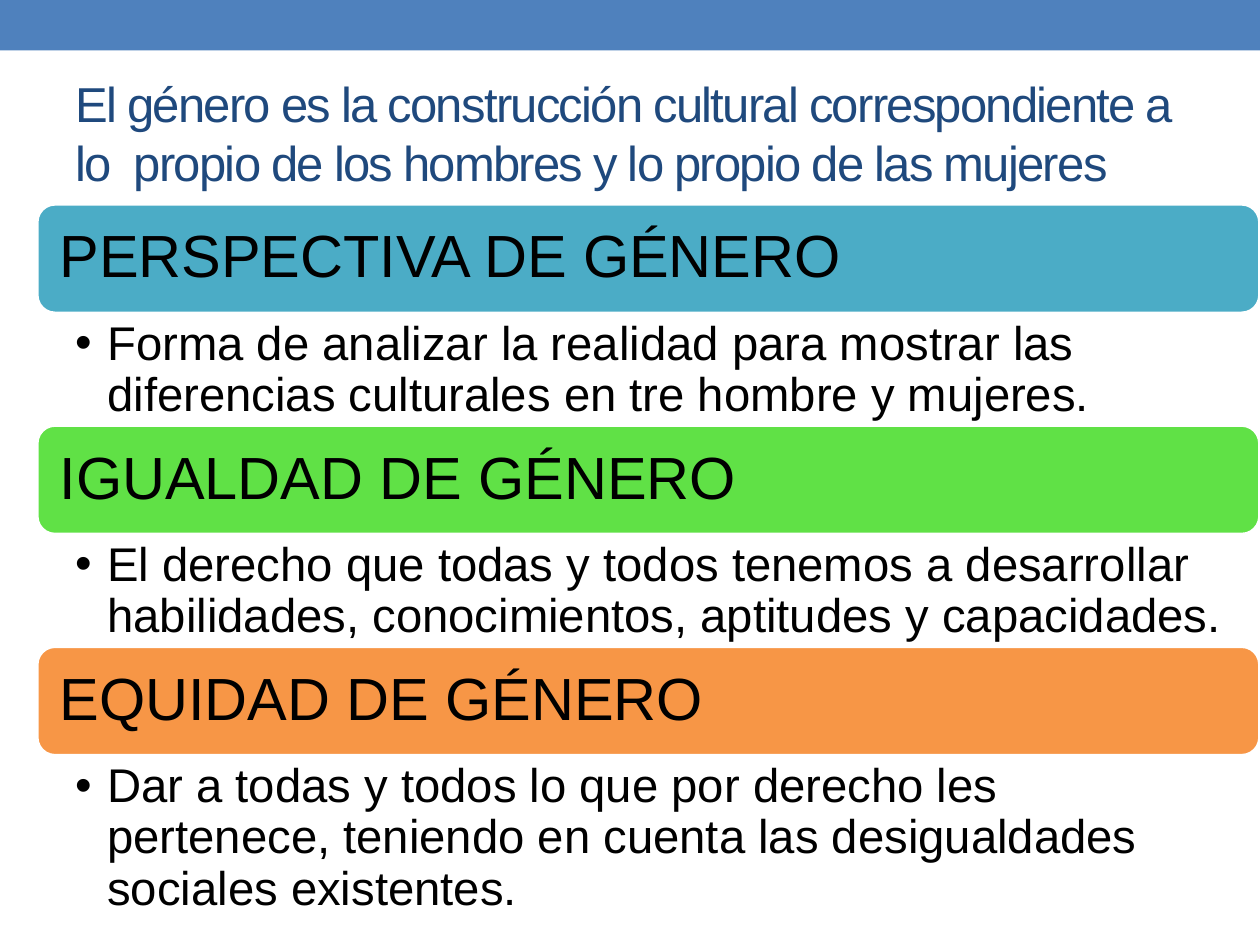
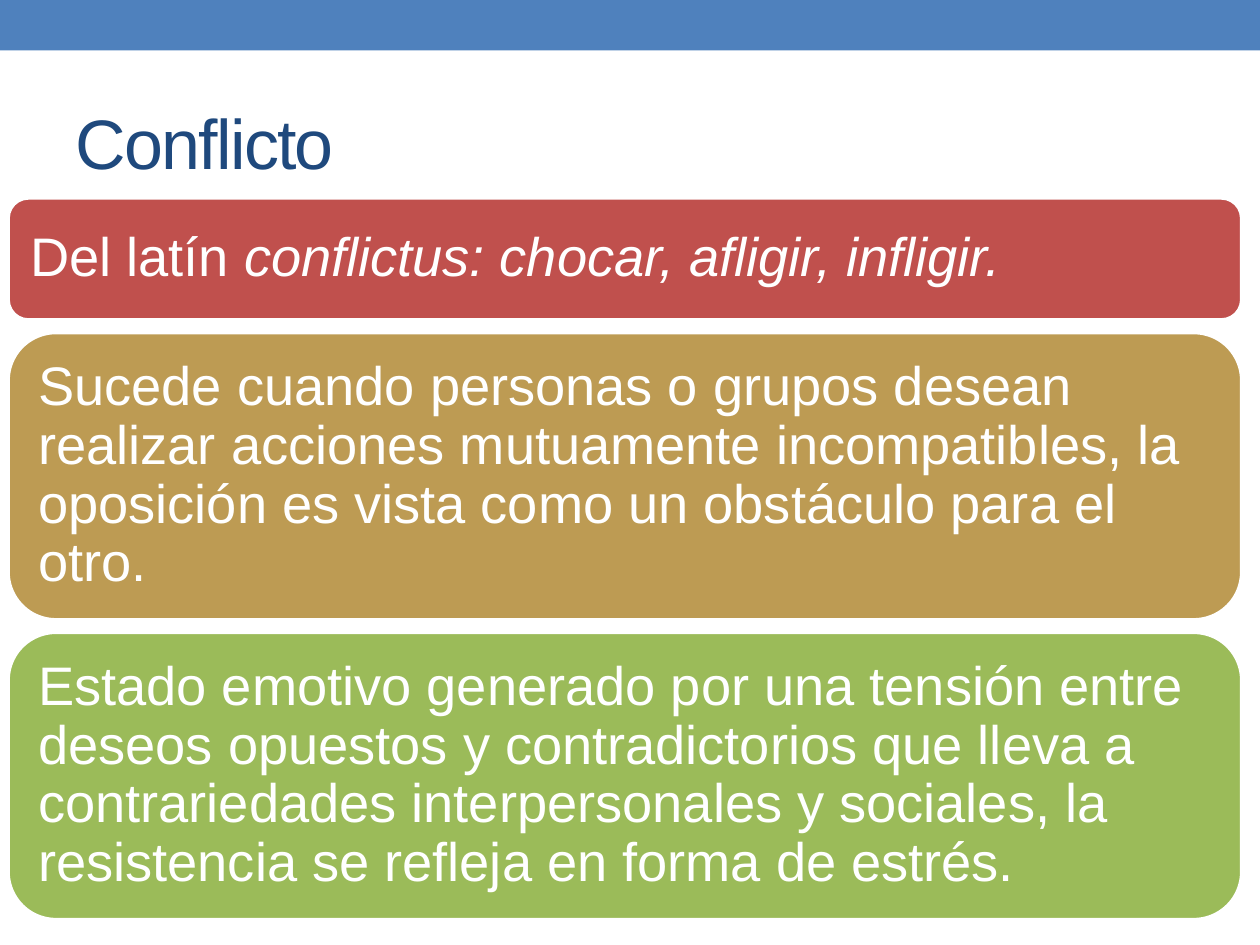
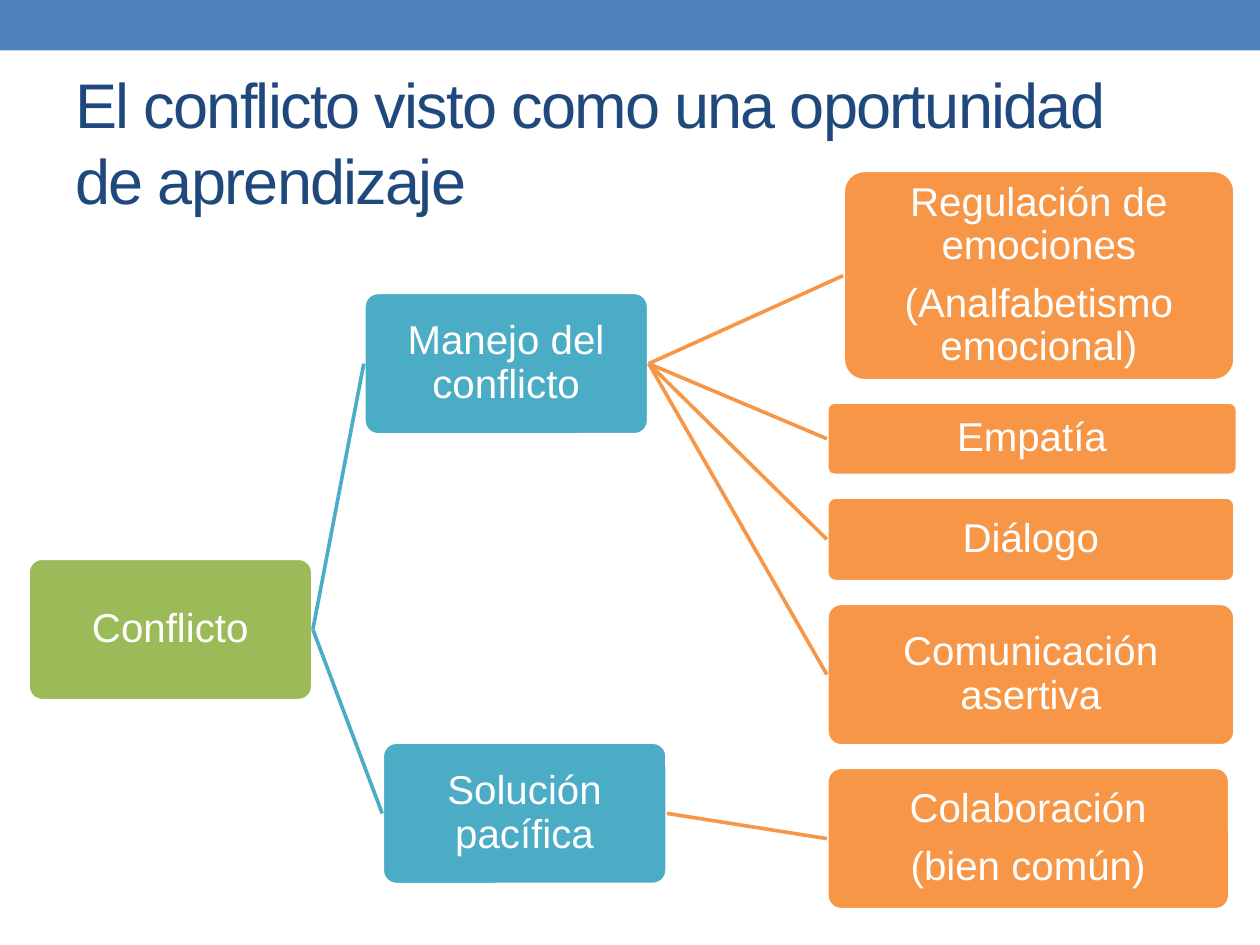
from dataclasses import dataclass

from lxml import etree
from pptx import Presentation
from pptx.dml.color import RGBColor
from pptx.enum.shapes import MSO_CONNECTOR, MSO_SHAPE
from pptx.enum.text import MSO_ANCHOR, MSO_AUTO_SIZE, PP_ALIGN
from pptx.oxml.ns import qn
from pptx.util import Pt

RECT = MSO_SHAPE.RECTANGLE
ROUND = MSO_SHAPE.ROUNDED_RECTANGLE
LINE = MSO_CONNECTOR.STRAIGHT
LEFT, CENTER = PP_ALIGN.LEFT, PP_ALIGN.CENTER
TOP, MIDDLE = MSO_ANCHOR.TOP, MSO_ANCHOR.MIDDLE
NO_FIT = MSO_AUTO_SIZE.NONE
TITLE_ONLY = 5


@dataclass(frozen=True)
class Theme:
    font: str = "Arial"
    blue: str = "4F81BD"
    navy: str = "1F497D"
    teal: str = "4BACC6"
    lime: str = "60E146"
    orange: str = "F79646"
    red: str = "C0504D"
    tan: str = "BD9B53"
    green: str = "9BBB59"
    white: str = "FFFFFF"
    black: str = "000000"
    head: int = 34
    item: int = 27
    panel: int = 31
    node: int = 23
    stroke: float = 2.08


T = Theme()
WIDTH, HEIGHT = 720, 540
BAND = (0, 0, WIDTH, 28.8)

TITLES = [
    ("El género es la construcción cultural correspondiente a "
     "lo  propio de los hombres y lo propio de las mujeres", 28, (36, 36.4, 648, 78.5)),
    ("Conflicto", 40, (36, 42, 648, 77.8)),
    ("El conflicto visto como una oportunidad de aprendizaje", 36, (36, 42, 648, 77.8)),
]

TERMS = [
    ("PERSPECTIVA DE GÉNERO", T.teal,
     "Forma de analizar la realidad para mostrar las diferencias "
     "culturales en tre hombre y mujeres."),
    ("IGUALDAD DE GÉNERO", T.lime,
     "El derecho que todas y todos tenemos a desarrollar habilidades, "
     "conocimientos, aptitudes y capacidades."),
    ("EQUIDAD DE GÉNERO", T.orange,
     "Dar a todas y todos lo que por derecho les pertenece, teniendo en cuenta "
     "las desigualdades sociales existentes."),
]

PANELS = [
    ("Del latín *conflictus: chocar, afligir, infligir.*", T.red, 69.8),
    ("Sucede cuando personas o grupos desean realizar acciones mutuamente "
     "incompatibles, la oposición es vista como un obstáculo para el otro.",
     T.tan, 164.2),
    ("Estado emotivo generado por una tensión entre deseos opuestos y "
     "contradictorios que lleva a contrariedades interpersonales y sociales, "
     "la resistencia se refleja en forma de estrés.", T.green, 164.2),
]

NODES = {
    "root": (["Conflicto"], T.green, None, (16, 319, 162.8, 81.4)),
    "manage": (["Manejo del conflicto"], T.teal, "root", (207.9, 167.1, 162.8, 81.4)),
    "calm": (["Regulación de emociones", "(Analfabetismo emocional)"],
             T.orange, "manage", (481.8, 97.4, 223.9, 120.2)),
    "care": (["Empatía"], T.orange, "manage", (472.5, 229.8, 234.6, 41.8)),
    "talk": (["Diálogo"], T.orange, "manage", (472.5, 284, 233.2, 48.4)),
    "speak": (["Comunicación asertiva"], T.orange, "manage", (472.5, 344.8, 233.2, 81.4)),
    "solve": (["Solución pacífica"], T.teal, "root", (218.4, 424.1, 162.8, 81.4)),
    "share": (["Colaboración", "(bien común)"],
              T.orange, "solve", (472.5, 438.5, 230.3, 81.4)),
}


def rgb(code):
    return RGBColor.from_string(code)


def put(target, **values):
    for name, value in values.items():
        setattr(target, name, value)


def write(shape, texts, size, color, pad, align=LEFT, anchor=MIDDLE, lead=0.9):
    frame = shape.text_frame
    sides = ("margin_left", "margin_top", "margin_right", "margin_bottom")
    put(frame, word_wrap=True, auto_size=NO_FIT, vertical_anchor=anchor,
        **{side: Pt(value) for side, value in zip(sides, pad)})
    for i, text in enumerate(texts):
        para = frame.add_paragraph() if i else frame.paragraphs[0]
        put(para, alignment=align, line_spacing=lead, space_before=Pt(8 if i else 0))
        for j, part in enumerate(text.split("*")):
            if part:
                run = para.add_run()
                run.text = part
                put(run.font, name=T.font, size=Pt(size), italic=j % 2 == 1)
                run.font.color.rgb = rgb(color)
    return frame


def add_box(slide, kind, place, fill, edge=None):
    box = slide.shapes.add_shape(kind, *map(Pt, place))
    box.shadow.inherit = False
    box.fill.solid()
    box.fill.fore_color.rgb = rgb(fill)
    if edge:
        box.line.color.rgb = rgb(edge)
        box.line.width = Pt(T.stroke)
    else:
        box.line.fill.background()
    return box


def add_title(deck, text, size, place):
    slide = deck.slides.add_slide(deck.slide_layouts[TITLE_ONLY])
    title = slide.shapes.title
    put(title, **dict(zip(("left", "top", "width", "height"), map(Pt, place))))
    frame = write(title, [text], size, T.navy, (7.2, 3.6, 7.2, 3.6), lead=1.0)
    frame.paragraphs[0].runs[0].font._element.set("spc", "-100")
    return slide


def add_bullet(para, indent):
    props = para._p.get_or_add_pPr()
    props.set("marL", str(Pt(indent)))
    props.set("indent", str(-Pt(indent)))
    etree.SubElement(props, qn("a:buFont")).set("typeface", T.font)
    etree.SubElement(props, qn("a:buChar")).set("char", "•")


def draw_terms(slide):
    left, top, wide, bar, gap = 21, 116.5, 699, 62.6, 63.8
    for i, (term, fill, text) in enumerate(TERMS):
        y = top + i * (bar + gap)
        box = add_box(slide, ROUND, (left, y, wide, bar), fill, T.white)
        write(box, [term], T.head, T.black, (10,) * 4)
        tall = 91.4 if i == len(TERMS) - 1 else gap
        note = slide.shapes.add_textbox(*map(Pt, (left, y + bar, wide, tall)))
        frame = write(note, [text], T.item, T.black, (22.3, 3.6, 18.7, 3.6), anchor=TOP)
        add_bullet(frame.paragraphs[0], 18)


def draw_panels(slide):
    left, y, wide, gap = 4.6, 113.1, 705, 7.1
    for text, fill, tall in PANELS:
        box = add_box(slide, ROUND, (left, y, wide, tall), fill, T.white)
        write(box, [text], T.panel, T.white, (9.3,) * 4)
        y += tall + gap


def draw_tree(slide):
    boxes = {}
    for key, (texts, fill, source, place) in NODES.items():
        box = boxes[key] = add_box(slide, ROUND, place, fill, T.white)
        box.adjustments[0] = 0.1
        write(box, texts, T.node, T.white, (1.4,) * 4, align=CENTER)
        if source:
            link = slide.shapes.add_connector(LINE, 0, 0, 0, 0)
            link.begin_connect(boxes[source], 3)
            link.end_connect(box, 1)
            link.line.color.rgb = rgb(fill)
            link.line.width = Pt(T.stroke)
            etree.SubElement(link._element.spPr, qn("a:effectLst"))


def main():
    deck = Presentation()
    put(deck, slide_width=Pt(WIDTH), slide_height=Pt(HEIGHT))
    slides = [add_title(deck, *title) for title in TITLES]
    band = add_box(slides[0], RECT, BAND, T.blue)
    deck.slide_master.shapes.element.insert(2, band._element)
    for draw, slide in zip((draw_terms, draw_panels, draw_tree), slides):
        draw(slide)
    deck.save("out.pptx")


if __name__ == "__main__":
    main()
